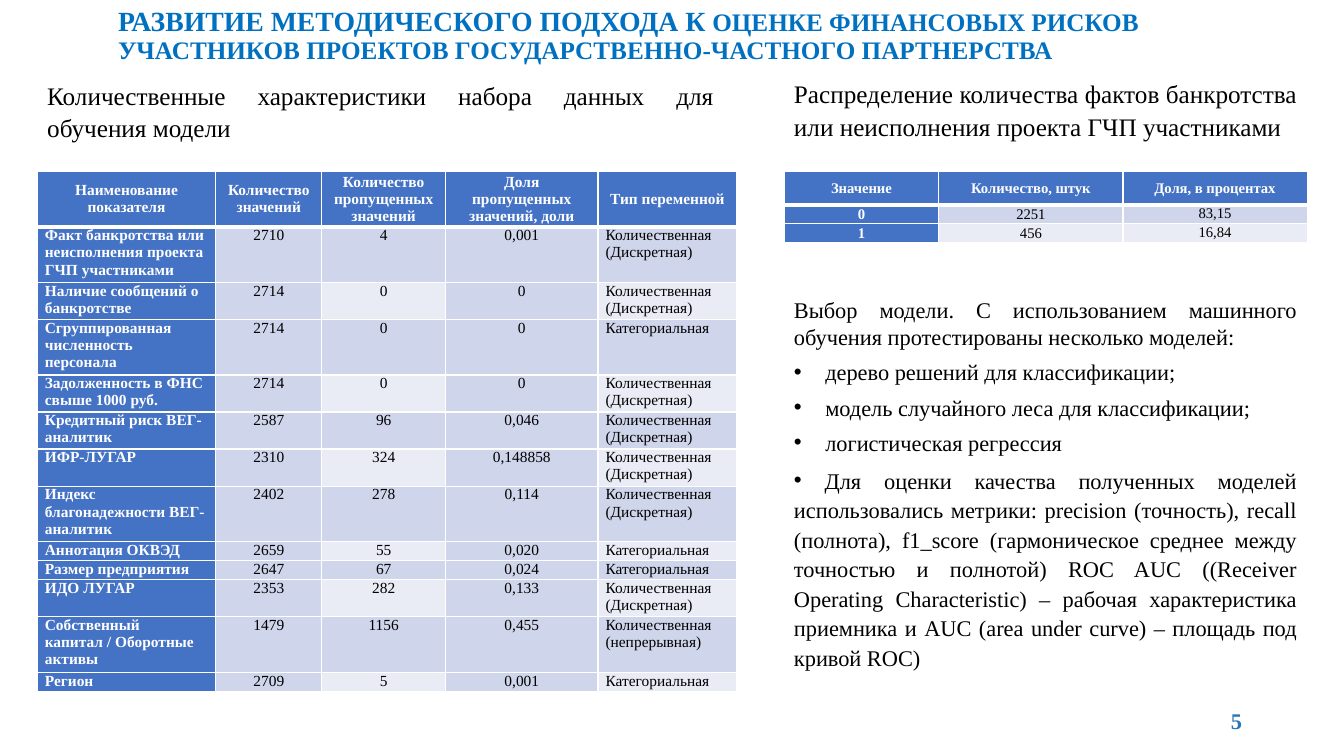
import pptx
import pptx.util
import pptx.dml.color
import pptx.enum.text
import pptx.oxml
import pptx.oxml.ns

Cm, Pt = pptx.util.Cm, pptx.util.Pt
ALIGN = pptx.enum.text.PP_ALIGN
ANCHOR = pptx.enum.text.MSO_ANCHOR
FIT = pptx.enum.text.MSO_AUTO_SIZE

# Content
TITLE = [
    ("РАЗВИТИЕ МЕТОДИЧЕСКОГО ПОДХОДА К ", "title"),
    ("ОЦЕНКЕ ФИНАНСОВЫХ РИСКОВ УЧАСТНИКОВ ПРОЕКТОВ "
     "ГОСУДАРСТВЕННО-ЧАСТНОГО ПАРТНЕРСТВА", "head"),
]
PAGE = "5"
LEFT = "Количественные характеристики набора данных для обучения модели"
RIGHT = ("Распределение количества фактов банкротства или неисполнения "
         "проекта ГЧП участниками")
DISC = "Количественная (Дискретная)"
CAT = "Категориальная"
DATA = [
    ("Наименование показателя", "Количество значений",
     "Количество пропущенных значений", "Доля пропущенных значений, доли",
     "Тип переменной"),
    ("Факт банкротства или неисполнения проекта ГЧП участниками",
     "2710", "4", "0,001", DISC),
    ("Наличие сообщений о банкротстве", "2714", "0", "0", DISC),
    ("Сгруппированная численность персонала", "2714", "0", "0", CAT),
    ("Задолженность в ФНС свыше 1000 руб.", "2714", "0", "0", DISC),
    ("Кредитный риск ВЕГ-аналитик", "2587", "96", "0,046", DISC),
    ("ИФР-ЛУГАР", "2310", "324", "0,148858", DISC),
    ("Индекс благонадежности ВЕГ-аналитик", "2402", "278", "0,114", DISC),
    ("Аннотация ОКВЭД", "2659", "55", "0,020", CAT),
    ("Размер предприятия", "2647", "67", "0,024", CAT),
    ("ИДО ЛУГАР", "2353", "282", "0,133", DISC),
    ("Собственный капитал / Оборотные активы", "1479", "1156", "0,455",
     "Количественная (непрерывная)"),
    ("Регион", "2709", "5", "0,001", CAT),
]
SHARE = [
    ("Значение", "Количество, штук", "Доля, в процентах"),
    ("0", "2251", "83,15"),
    ("1", "456", "16,84"),
]
INTRO = ("Выбор модели. С использованием машинного обучения протестированы "
         "несколько моделей:")
MODELS = [
    "дерево решений для классификации;",
    "модель случайного леса для классификации;",
    "логистическая регрессия",
]
METRICS = (
    " Для оценки качества полученных моделей использовались метрики: "
    "precision (точность), recall (полнота), f1_score (гармоническое среднее "
    "между точностью и полнотой) ROC AUC ((Receiver Operating Characteristic) "
    "– рабочая характеристика приемника и AUC (area under curve) – площадь "
    "под кривой ROC)")

THEME = {
    "font": "Times New Roman",
    "color": {"title": "0070C0", "page": "2E75B6", "text": "000000",
              "white": "FFFFFF", "head": "4472C4", "dark": "CFD5EA",
              "light": "E9EBF5"},
    "size": {"title": 19.8, "head": 18, "body": 16, "cell": 11, "small": 10.5},
}


def tint(name):
    return pptx.dml.color.RGBColor.from_string(THEME["color"][name])


def write(para, text, size="body", color="text", bold=False, align=ALIGN.JUSTIFY,
          line=None, before=None, after=None, dot=False, hang=0):
    """Add a run to a paragraph and format both."""
    run = para.add_run()
    run.text = text
    font = run.font
    font.name, font.size = THEME["font"], Pt(THEME["size"][size])
    font.bold, font.color.rgb = bold, tint(color)
    para.alignment = align
    if line:
        para.line_spacing = line
    if before is not None:
        para.space_before = Pt(before)
    if after is not None:
        para.space_after = Pt(after)
    if dot:
        props = para._p.get_or_add_pPr()
        props.set("marL", str(Cm(hang)))
        props.set("indent", str(-Cm(hang)))
        ns = pptx.oxml.ns.nsdecls("a")
        for tag in (f'<a:buFont {ns} typeface="Arial"/>',
                    f'<a:buChar {ns} char="•"/>'):
            props.append(pptx.oxml.parse_xml(tag))


def box(slide, *place, grow=True):
    frame = slide.shapes.add_textbox(*map(Cm, place)).text_frame
    frame.word_wrap = True
    frame.auto_size = FIT.SHAPE_TO_FIT_TEXT if grow else FIT.NONE
    return frame


def edge(cell, row):
    """White cell borders, thick between the header and the body."""
    ns = pptx.oxml.ns.nsdecls("a")
    thick = {("B", 0), ("T", 1)}
    for side in "LRTB":
        width = Pt(3 if (side, row) in thick else 1)
        cell._tc.get_or_add_tcPr().append(pptx.oxml.parse_xml(
            f'<a:ln{side} {ns} w="{width}"><a:solidFill><a:srgbClr '
            f'val="{THEME["color"]["white"]}"/></a:solidFill></a:ln{side}>'))


def grid(slide, data, left, top, cols, head, body, high, band, style, lefts, mids):
    """Table: band, lefts and mids are striped, left-aligned, centred columns."""
    holder = slide.shapes.add_table(len(data), len(cols), Cm(left), Cm(top),
                                    Cm(sum(cols)), Cm(high))
    table = holder.table
    for col, width in zip(table.columns, cols):
        col.width = Cm(width)
    for r, items in enumerate(data):
        table.rows[r].height = Cm(body if r else head)
        for c, text in enumerate(items):
            cell = table.cell(r, c)
            blue = r == 0 or c == 0
            cell.margin_left = cell.margin_right = Cm(0.19)
            cell.margin_top = cell.margin_bottom = 0
            middle = r == 0 or c in mids
            cell.vertical_anchor = ANCHOR.MIDDLE if middle else ANCHOR.TOP
            edge(cell, r)
            cell.fill.solid()
            stripe = "light" if c in band and r % 2 == 0 else "dark"
            cell.fill.fore_color.rgb = tint("head" if blue else stripe)
            side = ALIGN.LEFT if r and c in lefts else ALIGN.CENTER
            write(cell.text_frame.paragraphs[0], text, bold=blue, align=side,
                  color="white" if blue else "text", **style)
    holder.height = Cm(high)


def main():
    deck = pptx.Presentation()
    deck.slide_width, deck.slide_height = Cm(33.87), Cm(19.05)
    slide = deck.slides.add_slide(deck.slide_layouts[5])
    edge_l, edge_r, wide, top = 0.94, 19.76, 13.18, 4.32

    # Title
    title = slide.shapes.title
    title.left, title.top, title.width, title.height = map(
        Cm, (2.72, 0.08, 28.45, 1.68))
    frame = title.text_frame
    frame.auto_size, frame.word_wrap = FIT.NONE, True
    frame.vertical_anchor = ANCHOR.MIDDLE
    for text, size in TITLE:
        write(frame.paragraphs[0], text, size=size, color="title", bold=True,
              align=ALIGN.LEFT, line=0.9, before=0)

    # Page number
    frame = box(slide, 23.93, 17.65, 7.62, 1.02, grow=False)
    frame.vertical_anchor = ANCHOR.MIDDLE
    write(frame.paragraphs[0], PAGE, color="page", bold=True, align=ALIGN.RIGHT)

    # Table headings
    frame = box(slide, edge_l, 1.85, 17.3, 1.85)
    write(frame.paragraphs[0], LEFT, size="head", line=1.07)
    frame = box(slide, edge_r, 1.8, wide, 1.85)
    write(frame.paragraphs[0], RIGHT, size="head", line=1.07, after=8)

    # Tables
    grid(slide, DATA, edge_l, top, (4.5, 2.67, 3.12, 3.84, 3.5), 0.64, 0.48,
         12.62, band={2, 4}, style={"size": "cell"}, lefts={0, 4}, mids=set())
    grid(slide, SHARE, edge_r, top, (3.9, 4.64, 4.64), 0.84, 0.44, 1.72,
         band={1, 2}, style={"size": "small", "line": 1.07, "after": 8},
         lefts=set(), mids={0, 1})

    # Models and metrics
    frame = box(slide, edge_r, 7.34, wide, 9.75)
    write(frame.paragraphs[0], INTRO, before=6)
    for text in MODELS:
        write(frame.add_paragraph(), text, before=6, dot=True, hang=0.79)
    write(frame.add_paragraph(), METRICS, before=6, line=1.1, dot=True)

    deck.save("out.pptx")


if __name__ == "__main__":
    main()
